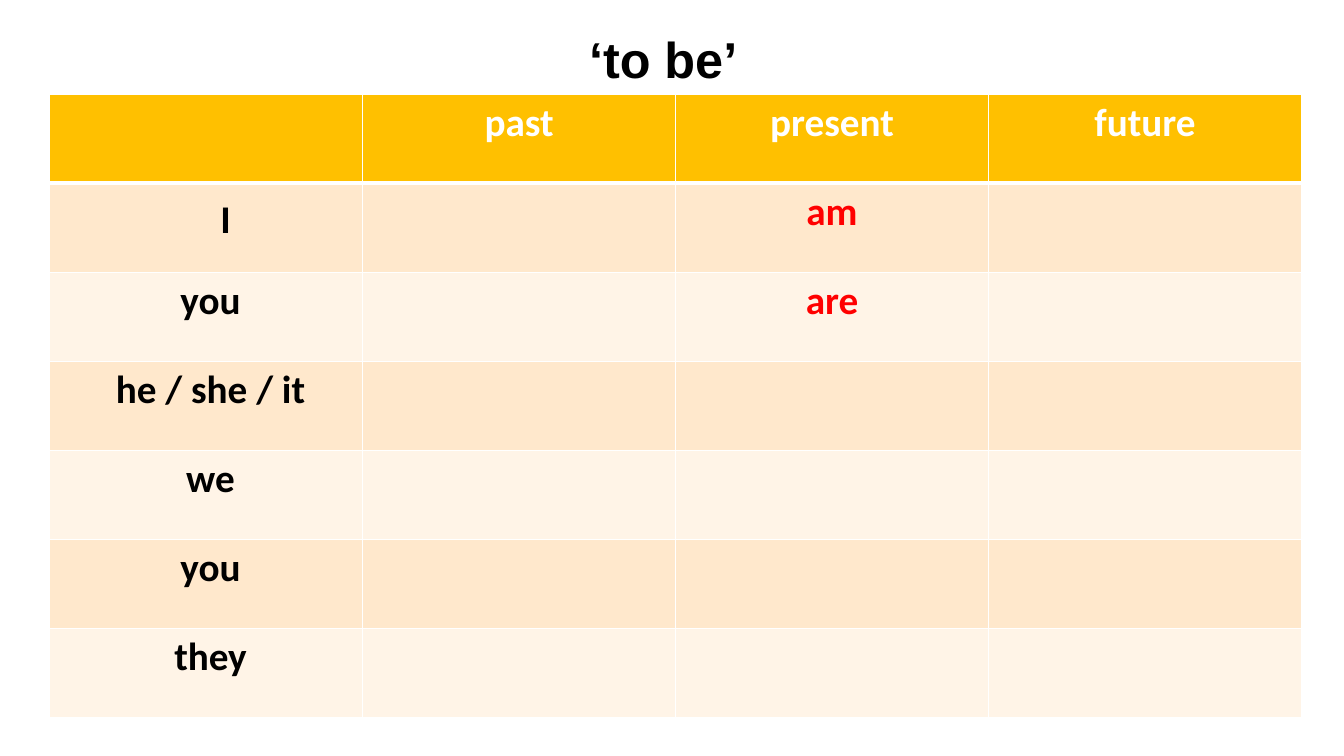
from dataclasses import dataclass

import pptx
import pptx.dml.color
import pptx.enum.text
import pptx.oxml
import pptx.oxml.ns
import pptx.table
import pptx.text.text
import pptx.util
from pptx.util import Cm

WHITE, BLACK, RED = "FFFFFF", "000000", "FF0000"
HEADER_FILL = "FFC000"
BAND_FILLS = ("FFE8CC", "FFF4E7")
TENSES = ("past", "present", "future")
TABLE_WIDTH, TABLE_HEIGHT = Cm(31.55), Cm(15.72)


@dataclass
class VerbRow:
    pronoun: str
    present: str = ""


VERB_ROWS = (
    VerbRow("　I", "am"),
    VerbRow(" you", "are"),
    VerbRow(" he / she / it"),
    VerbRow(" we"),
    VerbRow(" you"),
    VerbRow(" they"),
)


def color(value: str) -> pptx.dml.color.RGBColor:
    return pptx.dml.color.RGBColor.from_string(value)


def write(text_frame: pptx.text.text.TextFrame, text: str, font: str,
          size: float, text_color: str) -> None:
    """Write one centred bold line."""
    text_frame.text = text
    paragraph = text_frame.paragraphs[0]
    paragraph.alignment = pptx.enum.text.PP_ALIGN.CENTER
    for run in paragraph.runs:
        run.font.name = font
        run.font.size = pptx.util.Pt(size)
        run.font.bold = True
        run.font.color.rgb = color(text_color)


def set_borders(cell: pptx.table._Cell, top: float, bottom: float) -> None:
    """Draw white cell borders; widths are in points."""
    properties = cell._tc.get_or_add_tcPr()
    widths = {"lnL": 1, "lnR": 1, "lnT": top, "lnB": bottom}
    for index, (side, width) in enumerate(widths.items()):
        properties.insert(index, pptx.oxml.parse_xml(
            f'<a:{side} {pptx.oxml.ns.nsdecls("a")} w="{pptx.util.Pt(width)}">'
            f'<a:solidFill><a:srgbClr val="{WHITE}"/></a:solidFill></a:{side}>'))


def fill_cell(cell: pptx.table._Cell, text: str, text_color: str,
              fill: str, top: float, bottom: float) -> None:
    cell.fill.solid()
    cell.fill.fore_color.rgb = color(fill)
    set_borders(cell, top, bottom)
    if text:
        write(cell.text_frame, text, "Calibri", 28, text_color)


def add_verb_table(slide: pptx.slide.Slide) -> None:
    row_count, column_count = len(VERB_ROWS) + 1, len(TENSES) + 1
    table = slide.shapes.add_table(row_count, column_count, Cm(1.25), Cm(2.37),
                                   TABLE_WIDTH, TABLE_HEIGHT).table
    table.horz_banding = False

    # Header row
    for column, tense in enumerate(("", *TENSES)):
        fill_cell(table.cell(0, column), tense, WHITE, HEADER_FILL, 1, 3)

    # One row per pronoun
    for row, verb in enumerate(VERB_ROWS, start=1):
        fill = BAND_FILLS[(row - 1) % 2]
        top = 3 if row == 1 else 1
        for column, text in enumerate((verb.pronoun, "", verb.present, "")):
            text_color = BLACK if column == 0 else RED
            fill_cell(table.cell(row, column), text, text_color, fill, top, 1)


def add_title(slide: pptx.slide.Slide) -> None:
    title = slide.shapes.add_textbox(Cm(9.86), Cm(0.58), Cm(13.36), Cm(1.8))
    title.text_frame.word_wrap = True
    write(title.text_frame, " ‘to be’", "Arial", 36, BLACK)


def main() -> None:
    presentation = pptx.Presentation()
    presentation.slide_width = Cm(33.87)
    presentation.slide_height = Cm(19.05)
    slide = presentation.slides.add_slide(presentation.slide_layouts[6])
    add_verb_table(slide)
    add_title(slide)
    presentation.save("out.pptx")


if __name__ == "__main__":
    main()
